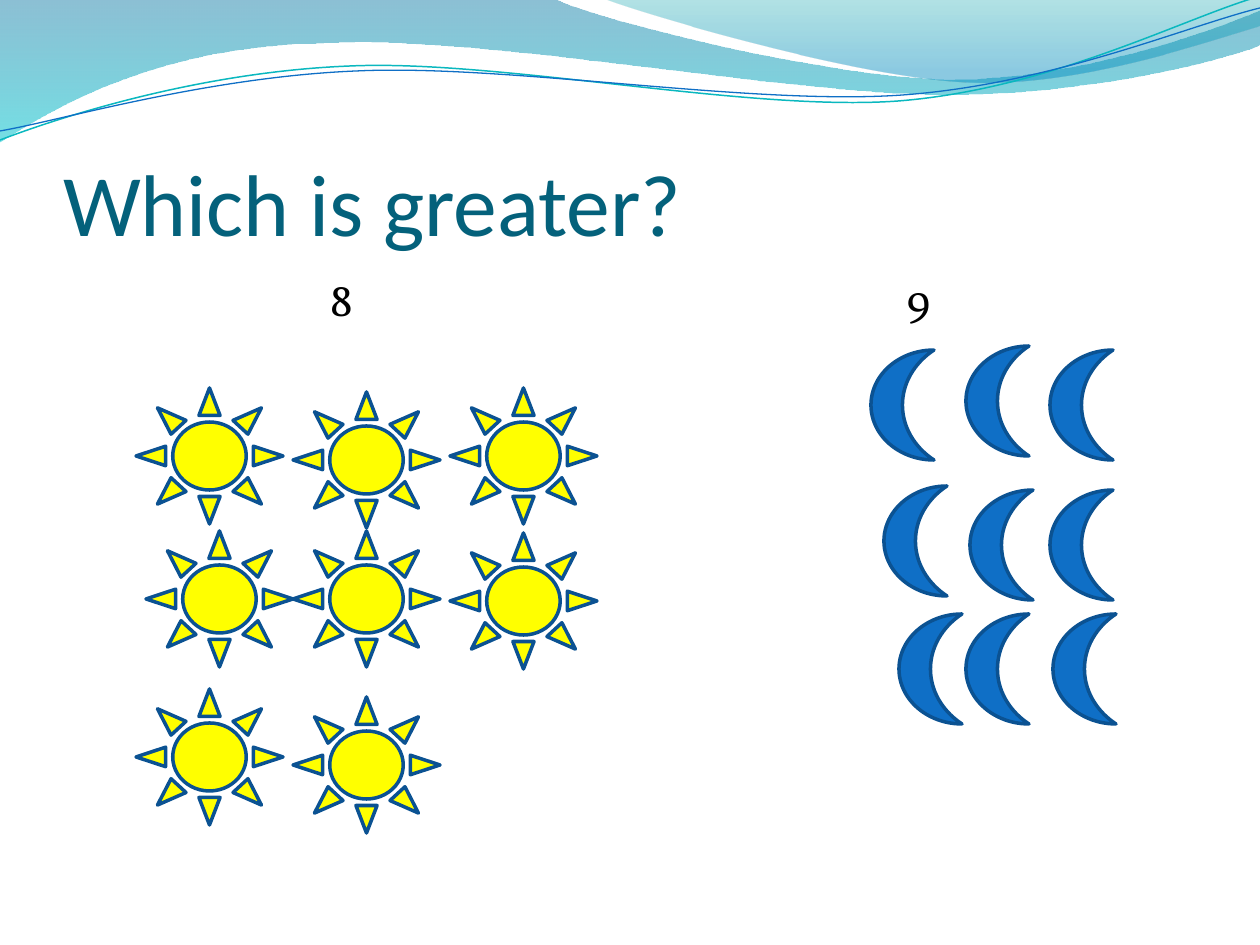
from lxml import etree
from pptx import Presentation
from pptx import util as u
from pptx.dml.color import RGBColor
from pptx.enum import shapes, text
from pptx.oxml.ns import qn

PX = 914400 / 126  # EMU per px

BLACK = RGBColor(0x00, 0x00, 0x00)
TITLE_TEAL = RGBColor(0x04, 0x61, 0x7B)
SUN_YELLOW = RGBColor(0xFF, 0xFF, 0x00)
BLUE = RGBColor(0x0F, 0x6F, 0xC6)
OUTLINE = RGBColor(0x0B, 0x52, 0x92)
TEAL_LINE = RGBColor(0x0A, 0xB8, 0xBF)
BAND_TOP = RGBColor(0x00, 0x74, 0xA1)
BAND_BOTTOM = RGBColor(0x00, 0xC6, 0xCF)
CREST_TOP = RGBColor(0x00, 0xA1, 0xA9)
CREST_BOTTOM = RGBColor(0x00, 0x8B, 0xBF)


def emu(px):
    return u.Emu(round(px * PX))


class SlideBuilder:
    title_font = "Calibri"
    body_font = "Vollkorn"

    def __init__(self, slide):
        self.slide = slide

    def outline(self, start, steps, close):
        """Path from start: a step of 2 numbers is a line, of 6 a Bezier curve."""
        knots = [step[i:i + 2] for step in steps for i in range(0, len(step), 2)]
        builder = self.slide.shapes.build_freeform(*start, scale=PX)
        builder.add_line_segments(knots, close=close)
        shape = builder.convert_to_shape()
        shape.shadow.inherit = False
        # Join the three knots of each curve into one Bezier segment
        segments = iter(list(shape.element.iter(qn("a:lnTo"))))
        for step in steps:
            first, *others = [next(segments) for _ in range(len(step) // 2)]
            if others:
                curve = etree.Element(qn("a:cubicBezTo"))
                first.addprevious(curve)
                for segment in (first, *others):
                    curve.append(segment[0])
                    segment.getparent().remove(segment)
        return shape

    def wave(self, start, steps, stops):
        """Closed shape with a see-through gradient running downwards."""
        shape = self.outline(start, steps, True)
        shape.line.fill.background()
        shape.fill.gradient()
        shape.fill.gradient_angle = 270
        for stop, (position, color, alpha) in zip(shape.fill.gradient_stops, stops):
            stop.position = position
            stop.color.rgb = color
        colors = shape.element.spPr.iter(qn("a:srgbClr"))
        for node, (position, color, alpha) in zip(list(colors), stops):
            etree.SubElement(node, qn("a:alpha"), val=str(alpha * 1000))

    def strand(self, start, steps, color, width):
        shape = self.outline(start, steps, False)
        shape.fill.background()
        shape.line.color.rgb = color
        shape.line.width = u.Pt(width)

    def placeholder(self, idx, box, words, font, size, color, align, anchor):
        holder = self.slide.placeholders[idx]
        self.slide.shapes.element.append(holder.element)  # in front of the waves
        holder.left, holder.top, holder.width, holder.height = map(emu, box)
        frame = holder.text_frame
        frame.auto_size = text.MSO_AUTO_SIZE.NONE
        frame.vertical_anchor = anchor
        paragraph = frame.paragraphs[0]
        paragraph.alignment = align
        run = paragraph.add_run()
        run.text = words
        run.font.name = font
        run.font.size = u.Pt(size)
        run.font.color.rgb = color
        return frame

    def title(self, box, words):
        frame = self.placeholder(0, box, words, self.title_font, 50, TITLE_TEAL,
                                 text.PP_ALIGN.LEFT, text.MSO_ANCHOR.BOTTOM)
        frame.margin_left = frame.margin_right = frame.margin_bottom = 0

    def count(self, idx, box, words):
        frame = self.placeholder(idx, box, words, self.body_font, 26, BLACK,
                                 text.PP_ALIGN.CENTER, text.MSO_ANCHOR.TOP)
        paragraph = frame.paragraphs[0]
        paragraph.space_before = u.Pt(5)
        props = paragraph._p.get_or_add_pPr()
        props.set("marL", "0")
        props.set("indent", "0")
        etree.SubElement(props, qn("a:buNone"))

    def counters(self, kind, corners, size, color):
        for corner in corners:
            shape = self.slide.shapes.add_shape(kind, *map(emu, corner + size))
            shape.shadow.inherit = False
            shape.fill.solid()
            shape.fill.fore_color.rgb = color
            shape.line.color.rgb = OUTLINE
            shape.line.width = u.Pt(2)


def main():
    deck = Presentation()
    deck.slide_width, deck.slide_height = emu(1260), emu(945)
    page = SlideBuilder(deck.slides.add_slide(deck.slide_layouts[3]))

    # Waves along the top
    page.wave((0, 0), [(554, -1), (600, 21, 837, 79, 955, 79),
                       (1075, 79, 1207, 33, 1260, 11), (1261, 45),
                       (1239, 55, 1096, 96, 940, 94), (784, 94, 481, 35, 324, 43),
                       (163, 45, 58, 105, -1, 142), (0, 0)],
              [(0, BAND_TOP, 45), (1, BAND_BOTTOM, 55)])
    page.wave((604, -1), [(641, 14, 859, 78, 969, 82),
                          (1079, 87, 1211, 40, 1260, 26), (1260, 0), (604, -1)],
              [(0, CREST_TOP, 30), (0.8, CREST_BOTTOM, 45)])
    page.strand((0, 140), [(60, 117, 199, 72, 349, 66), (498, 59, 747, 112, 898, 101),
                           (1050, 89, 1182, 19, 1257, -3)], TEAL_LINE, 0.85)
    page.strand((0, 131), [(59, 121, 207, 77, 357, 71), (508, 64, 752, 106, 903, 95),
                           (1053, 84, 1187, 26, 1260, 8)], BLUE, 0.75)

    # Question and the two numbers
    page.title((63, 97, 1134, 157), "Which is greater?")
    for idx, left, number in ((1, 63, "8"), (2, 640, "9")):
        page.count(idx, (left, 265, 557, 611), number)

    # Eight suns, nine moons, placed by hand
    suns = [(136, 388), (146, 531), (450, 388), (136, 689),
            (293, 697), (293, 531), (293, 392), (450, 533)]
    moons = [(871, 350), (966, 346), (1050, 350), (899, 614), (966, 614),
             (884, 486), (970, 490), (1053, 614), (1050, 490)]
    page.counters(shapes.MSO_SHAPE.SUN, suns, (147, 136), SUN_YELLOW)
    page.counters(shapes.MSO_SHAPE.MOON, moons, (63, 110), BLUE)

    deck.save("out.pptx")


if __name__ == "__main__":
    main()
